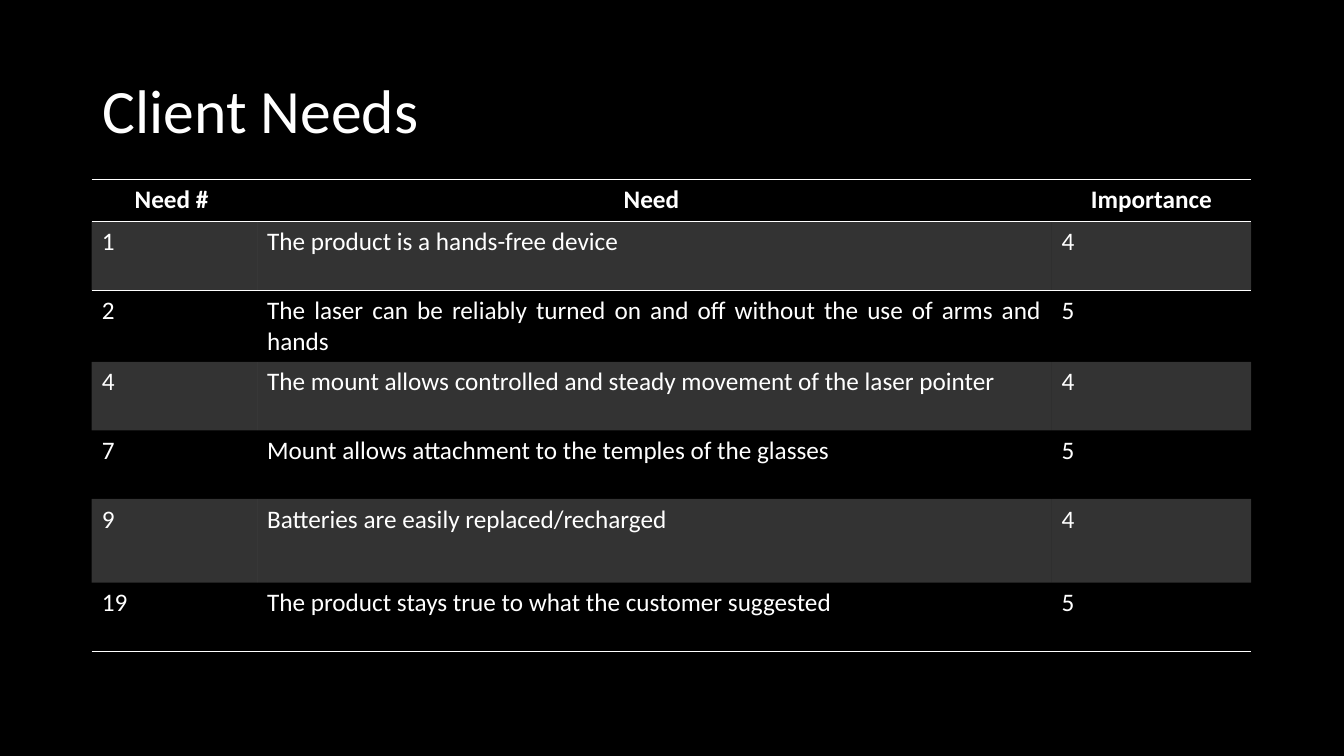
"""Build the Client Needs slide with its table of ranked needs."""
from lxml import etree
from pptx import Presentation
from pptx.dml.color import RGBColor
from pptx.enum.text import MSO_ANCHOR, PP_ALIGN
from pptx.oxml import parse_xml
from pptx.oxml.ns import nsdecls, qn
from pptx.util import Inches, Pt

COLORS = {"background": "000000", "text": "FFFFFF", "band": "FFFFFF", "rule": "FFFFFF"}
FONT = "Calibri"
NO_GRID_STYLE = "{2D5ABB26-0587-4C30-8999-92F81FD0307C}"
COL_WIDTHS = [1.64, 7.88, 1.98]
ROW_HEIGHTS = [0.42, 0.68, 0.68, 0.68, 0.68, 0.83, 0.68]
ROWS = [
    ("Need # ", "Need ", "Importance"),
    ("1", "The product is a hands-free device", "4"),
    ("2", "The laser can be reliably turned on and off without the use of arms and hands", "5"),
    ("4", "The mount allows controlled and steady movement of the laser pointer", "4"),
    ("7", "Mount allows attachment to the temples of the glasses", "5"),
    ("9", "Batteries are easily replaced/recharged", "4"),
    ("19", "The product stays true to what the customer suggested", "5"),
]


def add_run(p, text, size, bold=False):
    r = p.add_run()
    r.text = text
    r.font.name = FONT
    r.font.size = Pt(size)
    r.font.bold = bold
    r.font.color.rgb = RGBColor.from_string(COLORS["text"])


def add_rules(cell, sides):
    tcPr = cell._tc.get_or_add_tcPr()
    for i, side in enumerate(sides):
        tcPr.insert(i, parse_xml(
            f'<a:{side} {nsdecls("a")} w="12700"><a:solidFill>'
            f'<a:srgbClr val="{COLORS["rule"]}"/></a:solidFill></a:{side}>'))


prs = Presentation()
prs.slide_width, prs.slide_height = Inches(13.33), Inches(7.5)
s = prs.slides.add_slide(prs.slide_layouts[5])
s.background.fill.solid()
s.background.fill.fore_color.rgb = RGBColor.from_string(COLORS["background"])

title = s.shapes.title
title.left, title.top = Inches(0.92), Inches(0.4)
title.width, title.height = Inches(11.5), Inches(1.45)
tf = title.text_frame
tf.vertical_anchor = MSO_ANCHOR.MIDDLE
p = tf.paragraphs[0]
p.alignment = PP_ALIGN.LEFT
p.line_spacing = 0.9
add_run(p, "Client Needs", 44)

table = s.shapes.add_table(len(ROWS), len(COL_WIDTHS), Inches(0.91), Inches(1.78),
                           Inches(sum(COL_WIDTHS)), Inches(sum(ROW_HEIGHTS))).table
table._tbl.tblPr.find(qn("a:tableStyleId")).text = NO_GRID_STYLE
for col, width in zip(table.columns, COL_WIDTHS):
    col.width = Inches(width)

for i, (values, height) in enumerate(zip(ROWS, ROW_HEIGHTS)):
    table.rows[i].height = Inches(height)
    header = i == 0
    for j, value in enumerate(values):
        cell = table.cell(i, j)
        p = cell.text_frame.paragraphs[0]
        p.alignment = PP_ALIGN.CENTER if header else PP_ALIGN.JUSTIFY
        add_run(p, value, 18, bold=header)
        if i % 2:
            cell.fill.solid()
            cell.fill.fore_color.rgb = RGBColor.from_string(COLORS["band"])
            color = cell._tc.tcPr.find(".//" + qn("a:srgbClr"))
            etree.SubElement(color, qn("a:alpha")).set("val", "20000")
        else:
            cell.fill.background()
        if header:
            add_rules(cell, ["lnT", "lnB"])
        elif i == 1:
            add_rules(cell, ["lnT"])
        elif i == len(ROWS) - 1:
            add_rules(cell, ["lnB"])

prs.save("out.pptx")
